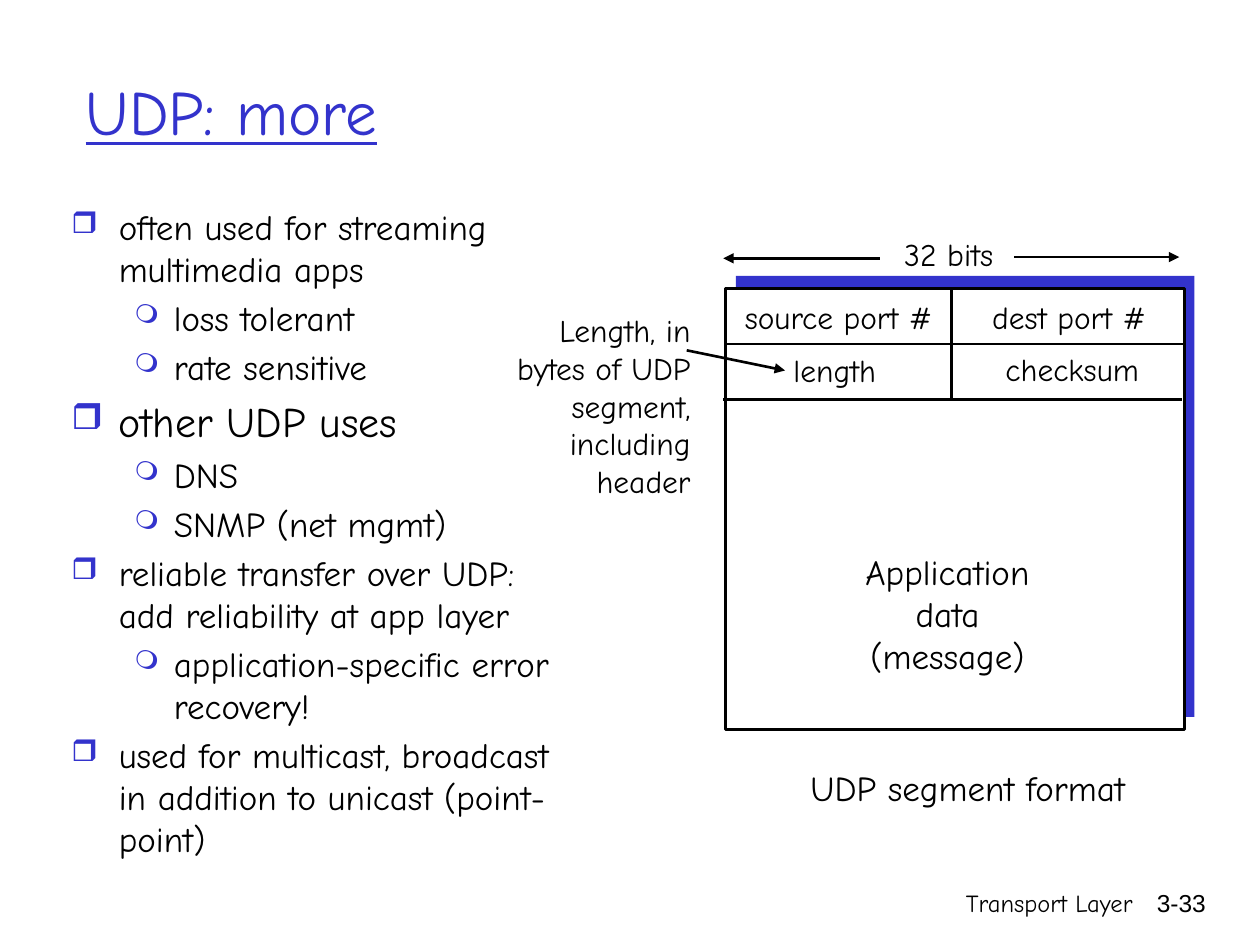
from pptx import Presentation
from pptx.dml.color import RGBColor
from pptx.enum import shapes, text
from pptx.oxml import parse_xml
from pptx.oxml.ns import nsdecls
from pptx.util import Pt

BLUE = RGBColor(0x33, 0x33, 0xCC)
BLACK = RGBColor(0, 0, 0)
WHITE = RGBColor(255, 255, 255)
FONT = "Comic Neue"
LEFT, CENTER, RIGHT = text.PP_ALIGN.LEFT, text.PP_ALIGN.CENTER, text.PP_ALIGN.RIGHT

# level: bullet, size in percent of the text, left margin, hanging indent
BULLETS = {0: ("❒", 85, 27, 27), 1: ("❍", 75, 58.5, 22.5)}

POINTS = [
    (0, 20, "often used for streaming multimedia apps"),
    (1, 20, "loss tolerant"),
    (1, 20, "rate sensitive"),
    (0, 24, "other UDP uses"),
    (1, 20, "DNS"),
    (1, 20, "SNMP (net mgmt)"),
    (0, 20, "reliable transfer over UDP: add reliability at app layer"),
    (1, 20, "application-specific error recovery!"),
    (0, 20, "used for multicast, broadcast in addition to unicast (point-point)"),
]


def style(p, size, color=BLACK, font=FONT):
    for r in p.runs:
        r.font.size, r.font.name = Pt(size), font
        r.font.color.rgb = color


def add_text(s, box, words, size, align=CENTER, color=BLACK, font=FONT, wrap=False):
    tf = s.shapes.add_textbox(*map(Pt, box)).text_frame
    tf.word_wrap = wrap
    tf.text = words
    for p in tf.paragraphs:
        p.alignment = align
        style(p, size, color, font)
    return tf


def add_rect(s, box, fill, line=None):
    sp = s.shapes.add_shape(shapes.MSO_SHAPE.RECTANGLE, *map(Pt, box))
    sp.shadow.inherit = False
    sp.fill.solid()
    sp.fill.fore_color.rgb = fill
    if line is None:
        sp.line.fill.background()
    else:
        sp.line.color.rgb, sp.line.width = line, Pt(1.5)


def add_line(s, x1, y1, x2, y2, arrow=False):
    c = s.shapes.add_connector(shapes.MSO_CONNECTOR.STRAIGHT, *map(Pt, (x1, y1, x2, y2)))
    c.line.color.rgb, c.line.width = BLACK, Pt(1.5)
    if arrow:
        c.line._get_or_add_ln().append(
            parse_xml(f'<a:tailEnd {nsdecls("a")} type="triangle"/>'))
    c._element.spPr.append(parse_xml(f'<a:effectLst {nsdecls("a")}/>'))


def add_bullet(p, level):
    char, percent, margin, hang = BULLETS[level]
    pPr = p._p.get_or_add_pPr()
    pPr.set("marL", str(Pt(margin)))
    pPr.set("indent", str(-Pt(hang)))
    for xml in (f'<a:buClr {nsdecls("a")}><a:srgbClr val="{BLUE}"/></a:buClr>',
                f'<a:buSzPct {nsdecls("a")} val="{percent * 1000}"/>',
                f'<a:buChar {nsdecls("a")} char="{char}"/>'):
        pPr.append(parse_xml(xml))


def add_title(s, box):
    tf = add_text(s, box, "UDP: more", 36, LEFT, BLUE, wrap=True)
    tf.vertical_anchor = text.MSO_ANCHOR.MIDDLE
    tf.paragraphs[0].runs[0].font.underline = True


def add_points(s, box):
    tf = s.shapes.add_textbox(*map(Pt, box)).text_frame
    tf.word_wrap = True
    tf.text = "\n".join(words for _, _, words in POINTS)
    for p, (level, size, _) in zip(tf.paragraphs, POINTS):
        p.level = level
        p.space_before = Pt(size * 0.2)
        add_bullet(p, level)
        style(p, size)


def add_segment(s, box):
    """UDP segment diagram; box is the outline of the segment itself."""
    x, y, w, h = box
    row, mid = 31.7, 129
    add_rect(s, (x + 5.8, y - 7.2, w, h), BLUE)
    add_rect(s, box, WHITE, BLACK)
    for i in (1, 2):
        add_line(s, x - 0.7 * i, y + row * i, x + w - 0.7 * i, y + row * i)
        add_line(s, x + mid, y + row * (i - 1), x + mid, y + row * i)

    for x1, y1, x2, y2 in [(165, -18, 259.2, -18), (88, -17.3, -1.4, -17.3),
                           (-22.3, 35.3, 33.9, 46.8)]:
        add_line(s, x + x1, y + y1, x + x2, y + y2, arrow=True)

    for dx, dy, tw, th, words, size, align in [
        (-1.4, 2.1, 131.8, 28.8, "source port #", 18, CENTER),
        (139, 2.1, 114.5, 28.8, "dest port #", 18, CENTER),
        (28.8, 32.4, 67, 28.8, "length", 18, CENTER),
        (150.5, 31.7, 95, 28.8, "checksum", 18, CENTER),
        (90, -33.9, 74.9, 28.8, "32 bits", 18, CENTER),
        (67.7, 146.1, 118, 79.2, "Application\ndata\n(message)", 20, CENTER),
        (33.9, 269.3, 208.8, 31, "UDP segment format", 20, CENTER),
        (-139.7, 9.3, 126.7, 115.2,
         "Length, in\nbytes of UDP\nsegment,\nincluding\nheader", 18, RIGHT),
    ]:
        add_text(s, (x + dx, y + dy, tw, th), words, size, align)


def add_footer(s, box):
    x, y, w, h = box
    number_w = 53.3
    add_text(s, (x, y, 228.2, h), "Transport Layer", 14, RIGHT, wrap=True)
    add_text(s, (x + w - number_w, y, number_w, h), "3-33", 14, RIGHT,
             font="Arial", wrap=True)


def main():
    prs = Presentation()
    prs.slide_width, prs.slide_height = Pt(720), Pt(540)
    s = prs.slides.add_slide(prs.slide_layouts[6])
    add_footer(s, (426.2, 504, 270, 36))
    add_title(s, (41.8, 18, 656.6, 90))
    add_points(s, (33.8, 113.8, 300.2, 365.8))
    add_segment(s, (414.7, 164.9, 262, 252))
    prs.save("out.pptx")


if __name__ == "__main__":
    main()
